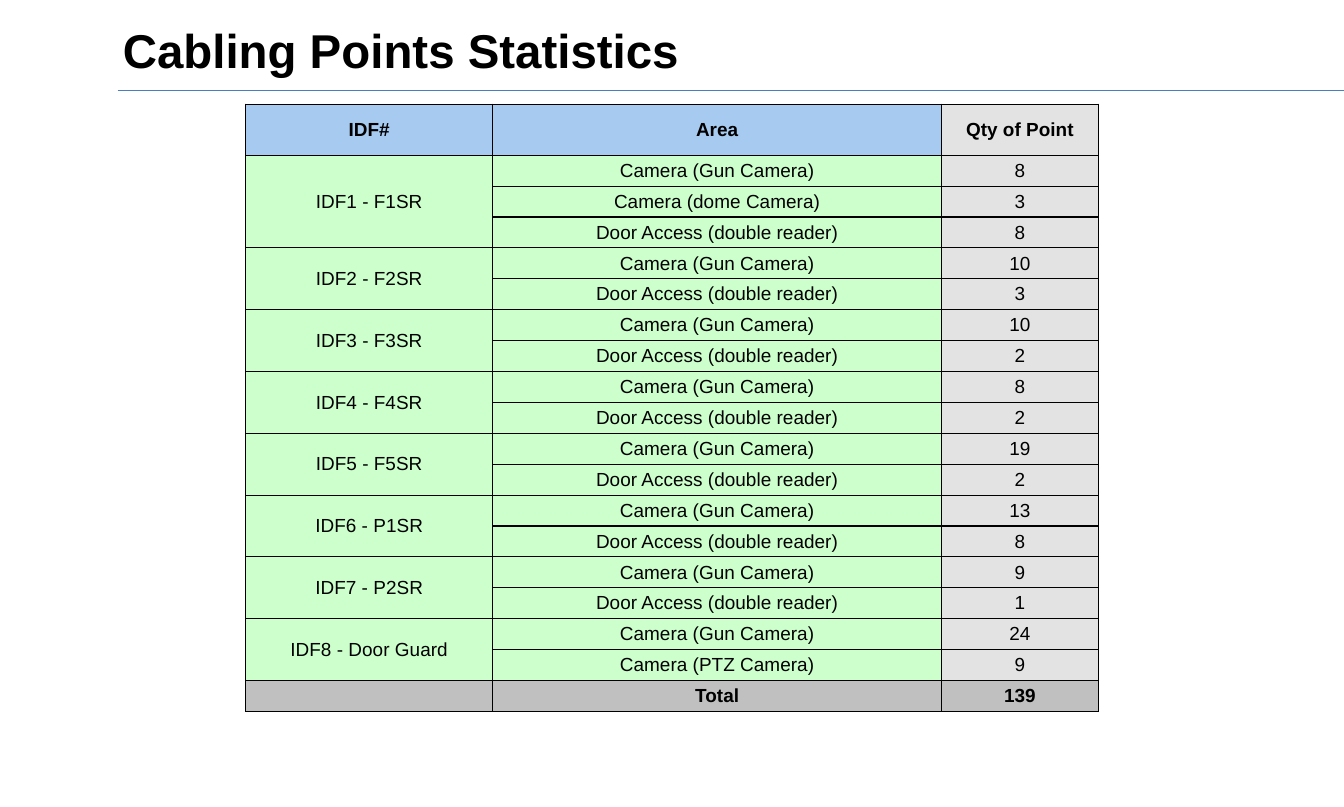
from dataclasses import dataclass

from lxml import etree
from pptx import Presentation
from pptx.dml.color import RGBColor
from pptx.enum import shapes, text
from pptx.oxml import ns
from pptx.slide import Slide
from pptx.table import Table, _Cell
from pptx.util import Inches, Pt


@dataclass(frozen=True)
class Theme:
    font: str = "Arial"
    title_size: float = 20
    table_size: float = 8
    border_width: float = 0.5
    rule_width: float = 0.75
    ink: str = "000000"
    rule: str = "4B7EBC"
    header: str = "A6CAF0"
    area: str = "CCFFCC"
    quantity: str = "E3E3E3"
    total: str = "C0C0C0"


@dataclass(frozen=True)
class Idf:
    name: str
    points: tuple[tuple[str, int], ...]


THEME = Theme()
GUN = "Camera (Gun Camera)"
DOOR = "Door Access (double reader)"
IDFS = (
    Idf("IDF1 - F1SR", ((GUN, 8), ("Camera (dome Camera)", 3), (DOOR, 8))),
    Idf("IDF2 - F2SR", ((GUN, 10), (DOOR, 3))),
    Idf("IDF3 - F3SR", ((GUN, 10), (DOOR, 2))),
    Idf("IDF4 - F4SR", ((GUN, 8), (DOOR, 2))),
    Idf("IDF5 - F5SR", ((GUN, 19), (DOOR, 2))),
    Idf("IDF6 - P1SR", ((GUN, 13), (DOOR, 8))),
    Idf("IDF7 - P2SR", ((GUN, 9), (DOOR, 1))),
    Idf("IDF8 - Door Guard", ((GUN, 24), ("Camera (PTZ Camera)", 9))),
)
COLUMN_WIDTHS = (1.45, 2.63, 0.92)
HEADER_HEIGHT = 0.3
TABLE_HEIGHT = 3.56


def format_paragraph(paragraph, size: float, bold: bool, align) -> None:
    paragraph.alignment = align
    font = paragraph.font
    font.name, font.size, font.bold = THEME.font, Pt(size), bold
    font.color.rgb = RGBColor.from_string(THEME.ink)


def add_title(slide: Slide, wording: str) -> None:
    title = slide.shapes.title
    title.left, title.top = Inches(0.64), Inches(0.08)
    title.width, title.height = Inches(5.8), Inches(0.42)
    frame = title.text_frame
    frame.text = wording
    frame.auto_size = text.MSO_AUTO_SIZE.NONE
    frame.vertical_anchor = text.MSO_ANCHOR.MIDDLE
    frame.margin_left = frame.margin_right = Inches(0.08)
    frame.margin_top = frame.margin_bottom = Inches(0.04)
    format_paragraph(frame.paragraphs[0], THEME.title_size, True, text.PP_ALIGN.LEFT)


def add_rule(slide: Slide) -> None:
    rule = slide.shapes.add_connector(
        shapes.MSO_CONNECTOR.STRAIGHT,
        Inches(0.69), Inches(0.53), Inches(7.88), Inches(0.53))
    rule.line.color.rgb = RGBColor.from_string(THEME.rule)
    rule.line.width = Pt(THEME.rule_width)
    etree.SubElement(rule._element.spPr, ns.qn("a:effectLst"))


def add_borders(cell: _Cell) -> None:
    properties = cell._tc.get_or_add_tcPr()
    for side in ("lnL", "lnR", "lnT", "lnB"):
        border = etree.SubElement(properties, ns.qn(f"a:{side}"),
                                  w=str(Pt(THEME.border_width)))
        fill = etree.SubElement(border, ns.qn("a:solidFill"))
        etree.SubElement(fill, ns.qn("a:srgbClr"), val=THEME.ink)


def fill_cell(cell: _Cell, wording: str, color: str, bold: bool) -> None:
    add_borders(cell)
    cell.fill.solid()
    cell.fill.fore_color.rgb = RGBColor.from_string(color)
    cell.margin_left = cell.margin_right = cell.margin_top = cell.margin_bottom = 0
    cell.vertical_anchor = text.MSO_ANCHOR.MIDDLE
    cell.text = wording
    paragraph = cell.text_frame.paragraphs[0]
    format_paragraph(paragraph, THEME.table_size, bold, text.PP_ALIGN.CENTER)
    if not wording:  # keeps an empty cell from stretching its row
        etree.SubElement(paragraph._p, ns.qn("a:endParaRPr"),
                         sz=str(int(THEME.table_size * 100)))


def fill_row(table: Table, row: int, wordings: tuple[str, ...],
             colors: tuple[str, ...], bold: bool = False) -> None:
    for column, (wording, color) in enumerate(zip(wordings, colors)):
        fill_cell(table.cell(row, column), wording, color, bold)


def add_points_table(slide: Slide) -> None:
    point_count = sum(len(idf.points) for idf in IDFS)
    last_row = point_count + 1
    table = slide.shapes.add_table(
        last_row + 1, len(COLUMN_WIDTHS), Inches(1.44), Inches(0.61),
        Inches(sum(COLUMN_WIDTHS)), Inches(TABLE_HEIGHT)).table
    table.horz_banding = False

    # Column and row sizes
    for column, width in zip(table.columns, COLUMN_WIDTHS):
        column.width = Inches(width)
    for row in table.rows:
        row.height = Inches((TABLE_HEIGHT - HEADER_HEIGHT) / last_row)
    table.rows[0].height = Inches(HEADER_HEIGHT)

    # Header
    fill_row(table, 0, ("IDF#", "Area", "Qty of Point"),
             (THEME.header, THEME.header, THEME.quantity), bold=True)

    # One merged block of rows for each IDF
    first = 1
    for idf in IDFS:
        for offset, (area, quantity) in enumerate(idf.points):
            name = "" if offset else idf.name
            fill_row(table, first + offset, (name, area, str(quantity)),
                     (THEME.area, THEME.area, THEME.quantity))
        following = first + len(idf.points)
        table.cell(first, 0).merge(table.cell(following - 1, 0))
        first = following

    # Total
    total = sum(quantity for idf in IDFS for _, quantity in idf.points)
    fill_row(table, last_row, ("", "Total", str(total)), (THEME.total,) * 3, bold=True)


def main() -> None:
    deck = Presentation()
    deck.slide_width, deck.slide_height = Inches(7.88), Inches(4.73)
    slide = deck.slides.add_slide(deck.slide_layouts.get_by_name("Title Only"))
    add_rule(slide)
    add_title(slide, "Cabling Points Statistics")
    add_points_table(slide)
    deck.save("out.pptx")


if __name__ == "__main__":
    main()
